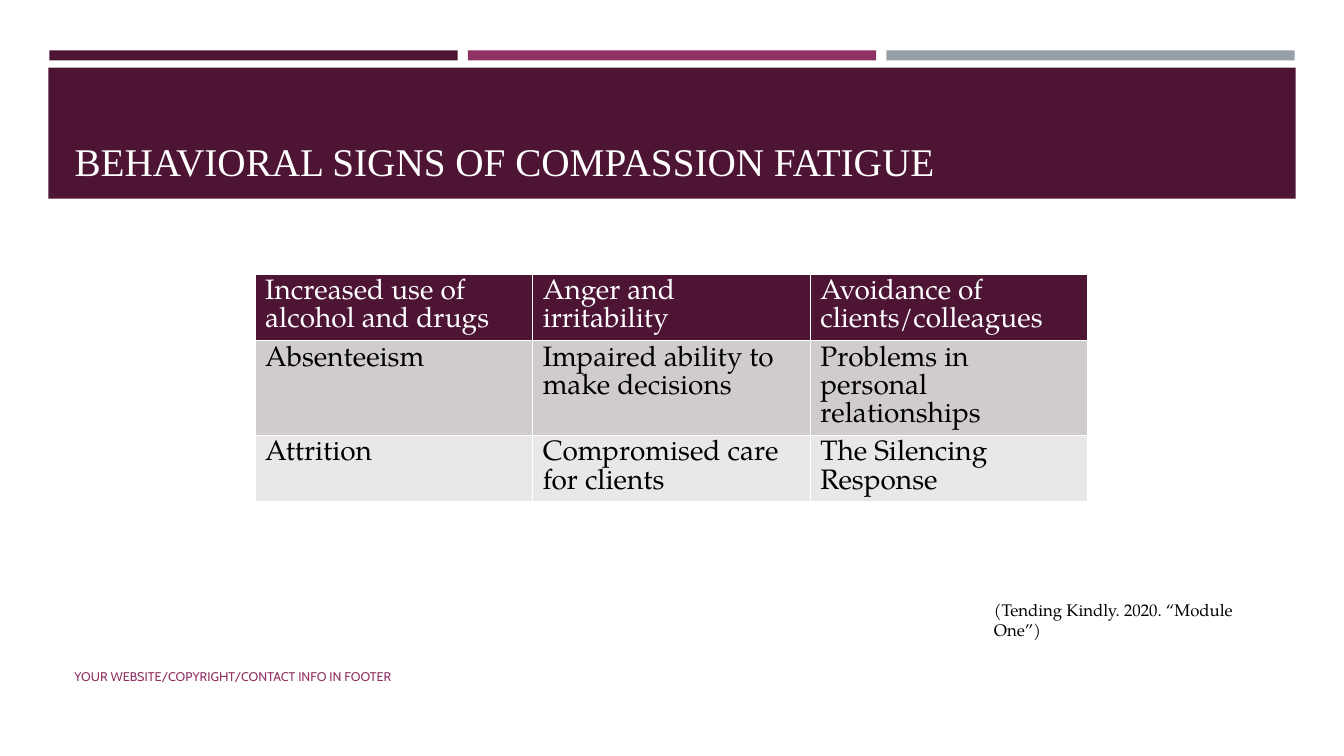
from pptx import Presentation
from pptx.dml.color import RGBColor
from pptx.enum.shapes import MSO_SHAPE
from pptx.enum.text import MSO_ANCHOR, MSO_AUTO_SIZE, PP_ALIGN
from pptx.oxml import parse_xml
from pptx.oxml.ns import nsdecls
from pptx.util import Inches, Pt

RECT = MSO_SHAPE.RECTANGLE
TOP, MIDDLE, BOTTOM = MSO_ANCHOR.TOP, MSO_ANCHOR.MIDDLE, MSO_ANCHOR.BOTTOM
GROW = MSO_AUTO_SIZE.SHAPE_TO_FIT_TEXT
LEFT = PP_ALIGN.LEFT

THEME = {
    "plum": RGBColor.from_string("4D1434"),
    "rose": RGBColor.from_string("903163"),
    "steel": RGBColor.from_string("969FA7"),
    "dark": RGBColor.from_string("D0CCCE"),
    "pale": RGBColor.from_string("E9E7E8"),
    "white": RGBColor.from_string("FFFFFF"),
    "black": RGBColor.from_string("000000"),
    "title": ("Times New Roman", 28),
    "cell": ("TeX Gyre Pagella", 20),
    "note": ("TeX Gyre Pagella", 12),
    "foot": ("Cabin", 9),
}


def write(frame, text, style, color, anchor):
    frame.text = text
    frame.word_wrap = True
    frame.vertical_anchor = anchor
    frame.paragraphs[0].alignment = LEFT
    font = frame.paragraphs[0].font
    font.name, size = THEME[style]
    font.size = Pt(size)
    font.color.rgb = THEME[color]


def block(left, top, width, height, color):
    rect = slide.shapes.add_shape(
        RECT, Inches(left), Inches(top), Inches(width), Inches(height))
    rect.shadow.inherit = False
    rect.fill.solid()
    rect.fill.fore_color.rgb = THEME[color]
    rect.line.fill.background()
    return rect


deck = Presentation()
deck.slide_width, deck.slide_height = Inches(13.33), Inches(7.5)
slide = deck.slides.add_slide(deck.slide_layouts[5])
title = slide.shapes.title

# Three bars above the title band
for col, color in enumerate(("plum", "rose", "steel")):
    block(0.49 + col * 4.15, 0.5, 4.05, 0.1, color)

# Title band, placed behind the title
band = block(0.48, 0.67, 12.37, 1.3, "plum")
title.element.addprevious(band.element)
title.left, title.top = Inches(0.64), Inches(0.77)
title.width, title.height = Inches(12.06), Inches(1.11)
write(title.text_frame, "BEHAVIORAL SIGNS OF COMPASSION FATIGUE",
      "title", "white", BOTTOM)

# Table of signs: row height, fill, text colour, cells
signs = [
    (0.65, "plum", "white", ("Increased use of alcohol and drugs",
                             "Anger and irritability",
                             "Avoidance of clients/colleagues")),
    (0.94, "dark", "black", ("Absenteeism",
                             "Impaired ability to make decisions",
                             "Problems in personal relationships")),
    (0.65, "pale", "black", ("Attrition",
                             "Compromised care for clients",
                             "The Silencing Response")),
]
table = slide.shapes.add_table(
    3, 3, Inches(2.53), Inches(2.72), Inches(8.26), Inches(2.24)).table
for r, (height, fill, color, words) in enumerate(signs):
    table.rows[r].height = Inches(height)
    for c, text in enumerate(words):
        cell = table.cell(r, c)
        write(cell.text_frame, text, "cell", color, TOP)
        cell.fill.solid()
        cell.fill.fore_color.rgb = THEME[fill]
        # Borders come before the fill in the cell properties
        for i, side in enumerate(("lnL", "lnR", "lnT", "lnB")):
            cell._tc.get_or_add_tcPr().insert(i, parse_xml(
                f'<a:{side} {nsdecls("a")} w="{Pt(1)}"><a:solidFill>'
                f'<a:srgbClr val="{THEME["white"]}"/></a:solidFill></a:{side}>'))

# Footer and source note
for left, top, width, height, text, style, color, anchor in (
    (0.64, 6.51, 7.56, 0.4, "YOUR WEBSITE/COPYRIGHT/CONTACT INFO IN FOOTER",
     "foot", "rose", MIDDLE),
    (9.76, 5.9, 3.06, 0.61, "(Tending Kindly. 2020. “Module One”)",
     "note", "black", TOP),
):
    box = slide.shapes.add_textbox(
        Inches(left), Inches(top), Inches(width), Inches(height))
    write(box.text_frame, text, style, color, anchor)
    if style == "note":
        box.text_frame.auto_size = GROW

deck.save("out.pptx")
